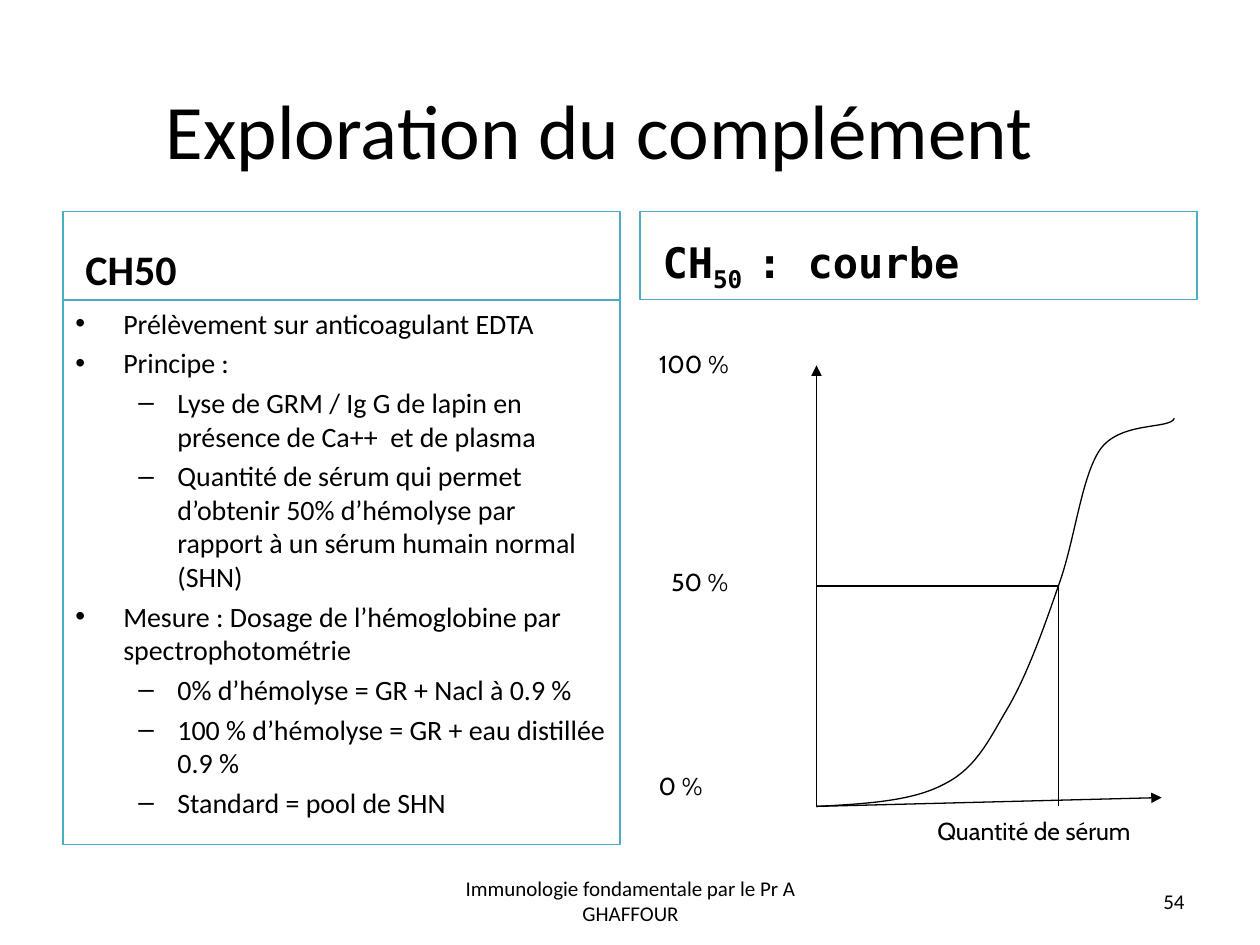
from pptx import Presentation
from pptx.dml.color import RGBColor
from pptx.enum.shapes import MSO_CONNECTOR, MSO_SHAPE
from pptx.enum.text import MSO_ANCHOR as ANCHOR, PP_ALIGN as ALIGN
from pptx.oxml.ns import qn
from pptx.util import Inches, Pt
from lxml.etree import SubElement

BLACK, TEAL = "000000", "4BACC6"


def set_color(color_format, value):
    color_format.rgb = RGBColor.from_string(value)


def add_run(paragraph, text, size, font="Calibri", bold=False):
    run = paragraph.add_run()
    run.text = text
    run.font.size = Pt(size)
    run.font.name = font
    run.font.bold = bold
    set_color(run.font.color, BLACK)
    return run


prs = Presentation()
prs.slide_width, prs.slide_height = Inches(10), Inches(7.5)
slide = prs.slides.add_slide(prs.slide_layouts[6])
shapes = slide.shapes

# Title, footer and page number
for text, left, top, width, height, size, align in [
    ("Exploration du complément", 0.51, 0.52, 8.5, 1, 44, ALIGN.CENTER),
    ("Immunologie fondamentale par le Pr A GHAFFOUR", 3.42, 6.95, 3.17, 0.4, 12, ALIGN.CENTER),
    ("54", 7.17, 6.95, 2.33, 0.4, 12, ALIGN.RIGHT),
]:
    frame = shapes.add_textbox(Inches(left), Inches(top), Inches(width), Inches(height)).text_frame
    frame.word_wrap = True
    frame.vertical_anchor = ANCHOR.MIDDLE
    frame.paragraphs[0].alignment = align
    add_run(frame.paragraphs[0], text, size)

# Framed panels: two headings and the method below the left one
panels = []
for left, top, height, anchor in [
    (0.5, 1.68, 0.7, ANCHOR.BOTTOM),
    (0.5, 2.38, 4.32, ANCHOR.TOP),
    (5.08, 1.68, 0.7, ANCHOR.BOTTOM),
]:
    panel = shapes.add_shape(MSO_SHAPE.RECTANGLE, Inches(left), Inches(top), Inches(4.42), Inches(height))
    panel.shadow.inherit = False
    panel.fill.background()
    panel.line.width = Pt(0.75)
    set_color(panel.line.color, TEAL)
    panel.text_frame.word_wrap = True
    panel.text_frame.vertical_anchor = anchor
    panels.append(panel.text_frame)
method_heading, method, curve_heading = panels

for heading in (method_heading, curve_heading):
    heading.paragraphs[0].alignment = ALIGN.LEFT
    heading.paragraphs[0]._p.get_or_add_pPr().set("marL", str(Inches(0.08)))
add_run(method_heading.paragraphs[0], "CH50", 24, bold=True)
for text, baseline in [("CH", 0), ("50 ", -25000), (": courbe", 0)]:
    run = add_run(curve_heading.paragraphs[0], text, 24, "DejaVu Sans Mono", bold=True)
    run.font._element.set("baseline", str(baseline))

# Method: (left margin, hanging indent, bullet) for each level
levels = [(0.38, 0.38, "•"), (0.81, 0.31, "–")]
steps = [
    (0, "Prélèvement sur anticoagulant EDTA"),
    (0, "Principe :"),
    (1, "Lyse de GRM / Ig G de lapin en présence de Ca++  et de plasma"),
    (1, "Quantité de sérum qui permet d’obtenir 50% d’hémolyse par rapport à un sérum humain normal (SHN)"),
    (0, "Mesure : Dosage de l’hémoglobine par spectrophotométrie"),
    (1, "0% d’hémolyse = GR + Nacl à 0.9 %"),
    (1, "100 % d’hémolyse = GR + eau distillée 0.9 %"),
    (1, "Standard = pool de SHN"),
]
for index, (level, text) in enumerate(steps):
    step = method.add_paragraph() if index else method.paragraphs[0]
    margin, hanging, bullet = levels[level]
    step.alignment = ALIGN.LEFT
    step.level = level
    step.space_before = Pt(3.5)
    props = step._p.get_or_add_pPr()
    props.set("marL", str(Inches(margin)))
    props.set("indent", str(-Inches(hanging)))
    SubElement(props, qn("a:buFont"), typeface="Arial")
    SubElement(props, qn("a:buChar"), char=bullet)
    add_run(step, text, 16)

# Axes with arrowheads, then the guides to the 50 % point
origin_x, origin_y = 6.48, 6.4
half_x, half_y = 8.4, 4.65
for x1, y1, x2, y2, is_axis in [
    (origin_x, origin_y, origin_x, 2.9, True),
    (origin_x, origin_y, 9.22, 6.33, True),
    (origin_x, half_y, half_x, half_y, False),
    (half_x, half_y, half_x, origin_y, False),
]:
    line = shapes.add_connector(MSO_CONNECTOR.STRAIGHT, Inches(x1), Inches(y1), Inches(x2), Inches(y2))
    line.line.width = Pt(0.75)
    set_color(line.line.color, BLACK)
    if is_axis:
        SubElement(line.line._get_or_add_ln(), qn("a:tailEnd"), type="triangle")
    SubElement(line._element.spPr, qn("a:effectLst"))

# Haemolysis curve: three Bézier points per segment
bezier_points = [
    (6.86, 6.38), (7.23, 6.36), (7.48, 6.23),
    (7.73, 6.11), (7.83, 5.91), (7.98, 5.65),
    (8.14, 5.39), (8.28, 5), (half_x, half_y),
    (8.53, 4.3), (8.58, 3.79), (8.73, 3.57),
    (8.89, 3.34), (9.29, 3.41), (9.32, 3.32),
]
builder = shapes.build_freeform(Inches(origin_x), Inches(origin_y))
builder.add_line_segments([(Inches(x), Inches(y)) for x, y in bezier_points], close=False)
curve = builder.convert_to_shape()
curve.shadow.inherit = False
curve.fill.background()
curve.line.width = Pt(0.75)
set_color(curve.line.color, BLACK)
# The builder only draws straight segments: merge each three into one cubic
straights = curve._element.xpath(".//a:lnTo")
outline = straights[0].getparent()
for start in range(0, len(straights), 3):
    cubic = SubElement(outline, qn("a:cubicBezTo"))
    for straight in straights[start:start + 3]:
        cubic.append(straight[0])
        outline.remove(straight)

# Axis labels
for text, left, top, width in [
    ("0 %", 5.13, 6.07, 0.56),
    ("50 %", 5.23, 4.45, 0.67),
    ("100 %", 5.13, 2.72, 0.78),
    ("Quantité de sérum", 7.34, 6.43, 1.81),
]:
    label = shapes.add_textbox(Inches(left), Inches(top), Inches(width), Inches(0.34)).text_frame
    label.word_wrap = False
    add_run(label.paragraphs[0], text, 14, "Cabin")

prs.save("out.pptx")
